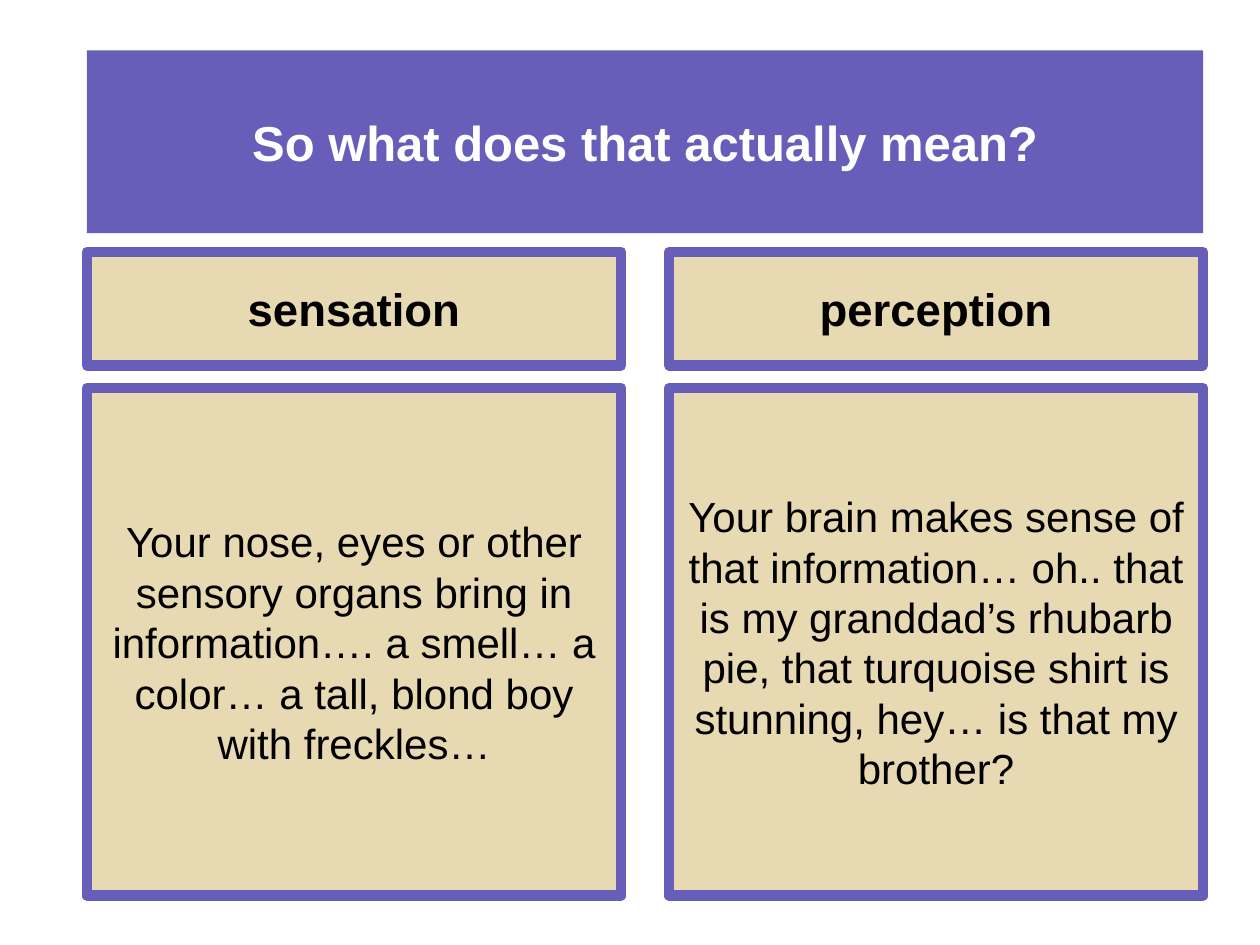
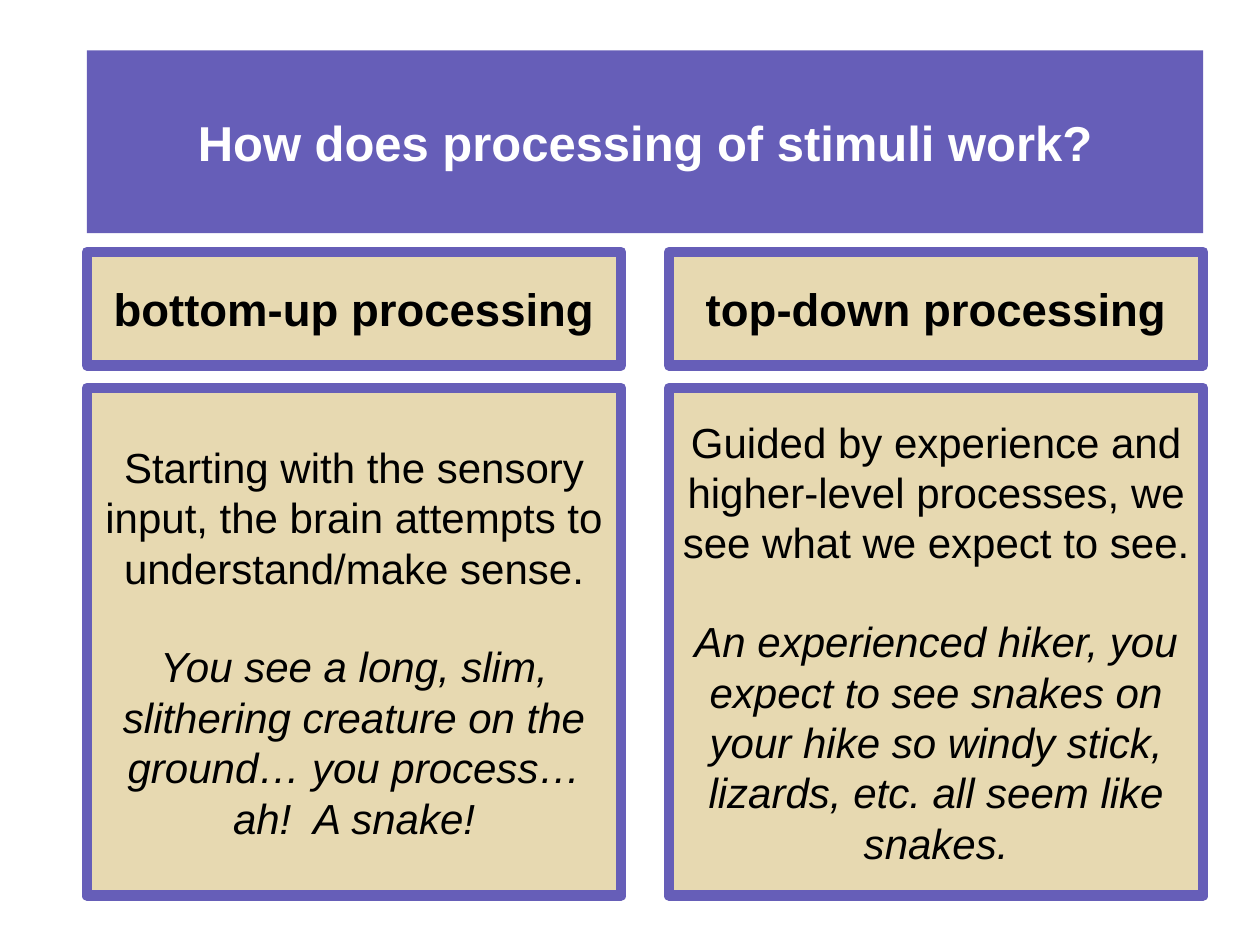
from dataclasses import dataclass

from lxml import etree
from pptx import Presentation
from pptx import util as u
from pptx.dml.color import RGBColor
from pptx.enum import shapes, text
from pptx.oxml import ns


@dataclass(frozen=True)
class Theme:
    font: str = "Arial"
    band: str = "665EB8"
    panel: str = "E7D9B1"
    ink: str = "000000"
    light: str = "FFFFFF"
    title: int = 28
    head: int = 26
    body: int = 24
    border: int = 6
    gap: float = 27.6  # one empty line of body text


THEME = Theme()

# Grid in inches: two equal columns, and (top, height) for each row
WIDTH, HEIGHT = 10, 7.5
LEFT, SPAN, GUTTER = 0.69, 8.86, 0.38
COLUMN = (SPAN - GUTTER) / 2
TITLE_ROW, HEAD_ROW, BODY_ROW = (0.4, 1.45), (2, 0.9), (3.08, 4.03)

SLIDES = [
    ("So what does that actually mean?", [
        ("sensation",
         ["Your nose, eyes or other sensory organs bring in information…. "
          "a smell… a color… a tall, blond boy with freckles…"]),
        ("perception",
         ["Your brain makes sense of that information… oh.. that is my "
          "granddad’s rhubarb pie, that turquoise shirt is stunning, hey… "
          "is that my brother?"]),
    ]),
    ("How does processing of stimuli work?", [
        ("bottom-up processing",
         ["Starting with the sensory input, the brain attempts to "
          "understand/make sense.",
          "You see a long, slim, slithering creature on the ground… "
          "you process… ah!  A snake!"]),
        ("top-down processing",
         ["Guided by experience and higher-level processes, we see what we "
          "expect to see.",
          "An experienced hiker, you expect to see snakes on your hike so "
          "windy stick, lizards, etc. all seem like snakes."]),
    ]),
]


def rgb(code):
    return RGBColor.from_string(code)


def add_box(slide, left, width, row, fill):
    top, height = row
    box = slide.shapes.add_shape(
        shapes.MSO_SHAPE.RECTANGLE,
        *map(u.Inches, (left, top, width, height)))
    box.shadow.inherit = False
    box.fill.solid()
    box.fill.fore_color.rgb = rgb(fill)
    box.line.fill.background()
    box.text_frame.word_wrap = True
    box.text_frame.vertical_anchor = text.MSO_ANCHOR.MIDDLE
    return box


def add_border(box):
    """Give the box a thick outline with rounded joins."""
    box.line.color.rgb = rgb(THEME.band)
    box.line.width = u.Pt(THEME.border)
    etree.SubElement(box.line._get_or_add_ln(), ns.qn("a:round"))


def add_text(box, lines, size, color, bold=False):
    """Write centred paragraphs; those after the first are italic examples."""
    frame = box.text_frame
    for index, line in enumerate(lines):
        para = frame.add_paragraph() if index else frame.paragraphs[0]
        para.alignment = text.PP_ALIGN.CENTER
        if index:
            para.space_before = u.Pt(THEME.gap)
        run = para.add_run()
        run.text = line
        font = run.font
        font.name, font.size = THEME.font, u.Pt(size)
        font.bold, font.italic = bold, index > 0
        font.color.rgb = rgb(color)


def add_title(slide, title):
    box = add_box(slide, LEFT, SPAN, TITLE_ROW, THEME.band)
    add_text(box, [title], THEME.title, THEME.light, bold=True)


def add_panel(slide, col, row, lines, size, bold=False):
    left = LEFT + col * (COLUMN + GUTTER)
    box = add_box(slide, left, COLUMN, row, THEME.panel)
    add_border(box)
    add_text(box, lines, size, THEME.ink, bold)


def main():
    deck = Presentation()
    deck.slide_width, deck.slide_height = u.Inches(WIDTH), u.Inches(HEIGHT)
    for title, topics in SLIDES:
        slide = deck.slides.add_slide(deck.slide_layouts[6])
        add_title(slide, title)
        for col, (head, body) in enumerate(topics):
            add_panel(slide, col, HEAD_ROW, [head], THEME.head, bold=True)
            add_panel(slide, col, BODY_ROW, body, THEME.body)
    deck.save("out.pptx")


if __name__ == "__main__":
    main()
